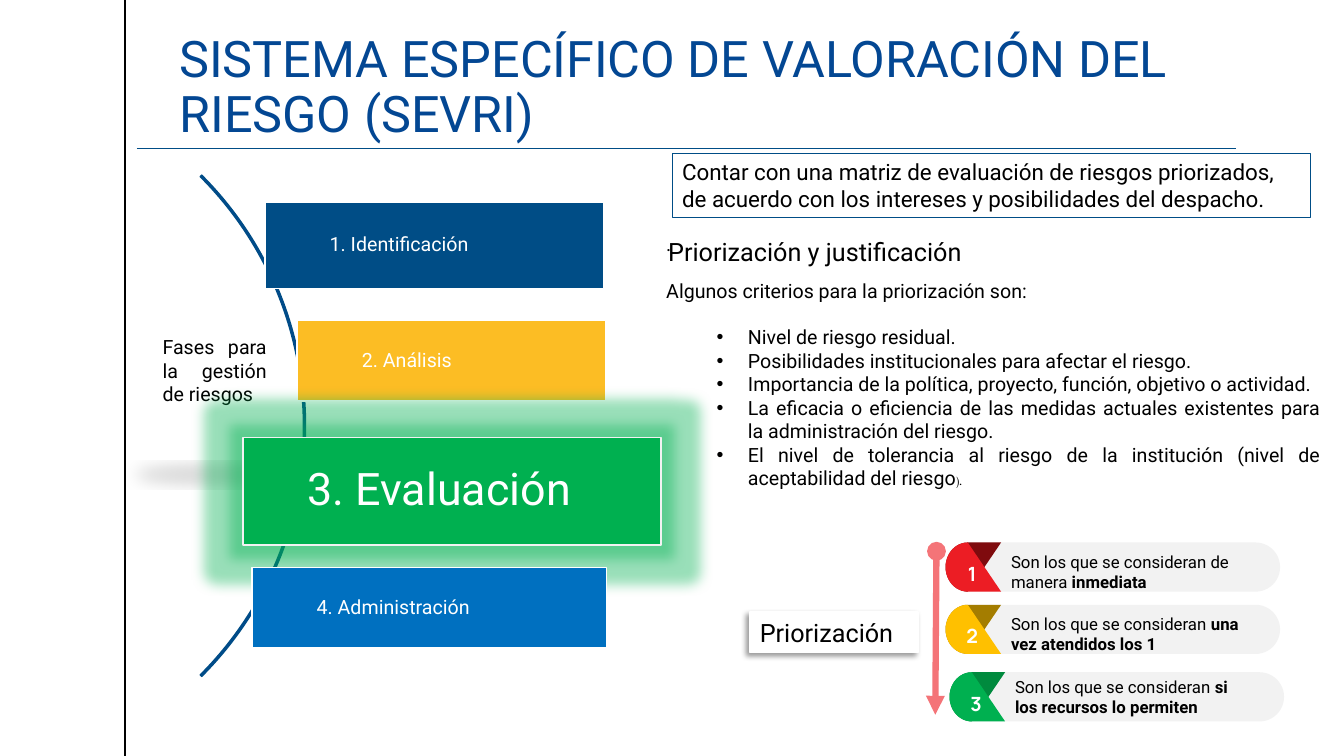
"""Build the slide on the SEVRI risk evaluation phase."""
from dataclasses import dataclass
from math import cos, pi, sin
from typing import Optional

from lxml.etree import SubElement
from pptx import Presentation
from pptx.dml.color import RGBColor
from pptx.enum.shapes import MSO_CONNECTOR, MSO_SHAPE
from pptx.enum.text import MSO_ANCHOR, MSO_AUTO_SIZE, PP_ALIGN
from pptx.oxml import parse_xml
from pptx.oxml.ns import nsdecls, qn
from pptx.util import Cm, Pt

COLORS = {
    "title": "034793", "navy": "004D86", "amber": "FCBD24", "green": "00B050",
    "blue": "0070C0", "white": "FFFFFF", "black": "000000", "pale": "F2F2F2",
    "arrow": "F47478", "red": "EC1D24", "dark_red": "7F0B0E", "yellow": "FFC000",
    "dark_yellow": "A47D00", "dark_green": "008A3E",
}
PILL_WIDTH, PILL_HEIGHT = 8.43, 1.24
BADGE_WIDTH, BADGE_ROUND = 1.4, 0.56
ARC_STEPS = 24


@dataclass(frozen=True)
class Phase:
    name: str
    left: float
    top: float
    width: float
    height: float
    fill: str
    border: str = "white"
    size: int = 14


@dataclass(frozen=True)
class Priority:
    number: str
    lead: str
    emphasis: str
    left: float
    top: float
    text_top: float
    fill: str
    fold: str


PHASES = (
    Phase("1. Identificación", 6.68, 5.11, 8.53, 2.16, "navy"),
    Phase("2. Análisis", 7.49, 8.08, 7.77, 2.03, "amber"),
    Phase("3. Evaluación", 6.12, 11.02, 10.54, 2.72, "green", "pale", 32),
    Phase("4. Administración", 6.35, 14.3, 8.94, 2.03, "blue"),
)
PRIORITIES = (
    Priority("1", "Son los que se consideran de manera ", "inmediata",
             23.83, 13.67, 13.77, "red", "dark_red"),
    Priority("2", "Son los que se consideran ", "una vez atendidos los 1",
             23.83, 15.24, 15.34, "yellow", "dark_yellow"),
    Priority("3", "Son los que se consideran ", "si los recursos lo permiten",
             23.93, 16.94, 16.92, "green", "dark_green"),
)
CRITERIA = (
    "Nivel de riesgo residual.",
    "Posibilidades institucionales para afectar el riesgo.",
    "Importancia de la política, proyecto, función, objetivo o actividad.",
    "La eficacia o eficiencia de las medidas actuales existentes para la administración del riesgo.",
    "El nivel de tolerancia al riesgo de la institución (nivel de aceptabilidad del riesgo",
)


def rgb(name: str) -> RGBColor:
    """Return the named colour."""
    return RGBColor.from_string(COLORS[name])


def write(paragraph, text: str, *, size: float, color: str = "black", font: str = "Roboto",
          bold: bool = False, align=PP_ALIGN.LEFT, line_spacing: Optional[float] = None,
          space_before: float = 0) -> None:
    """Append a formatted run to a paragraph."""
    paragraph.alignment = align
    paragraph.space_before = Pt(space_before)
    if line_spacing:
        paragraph.line_spacing = line_spacing
    run = paragraph.add_run()
    run.text = text
    run.font.name, run.font.size, run.font.bold = font, Pt(size), bold
    run.font.color.rgb = rgb(color)


def style(shape, fill: Optional[str], border: Optional[str] = None, weight: float = 1) -> None:
    """Set fill and border and remove the shadow."""
    shape.shadow.inherit = False
    if fill:
        shape.fill.solid()
        shape.fill.fore_color.rgb = rgb(fill)
    else:
        shape.fill.background()
    if border:
        shape.line.color.rgb = rgb(border)
        shape.line.width = Pt(weight)
    else:
        shape.line.fill.background()


def add_block(slide, kind, left: float, top: float, width: float, height: float,
              fill: Optional[str], border: Optional[str] = None, weight: float = 1):
    """Add a preset shape with wrapped, top-anchored text."""
    block = slide.shapes.add_shape(kind, Cm(left), Cm(top), Cm(width), Cm(height))
    style(block, fill, border, weight)
    block.text_frame.word_wrap = True
    block.text_frame.vertical_anchor = MSO_ANCHOR.TOP
    return block


def add_frame(slide, left: float, top: float, width: float, height: float):
    """Add a wrapping text box and return its text frame."""
    frame = slide.shapes.add_textbox(Cm(left), Cm(top), Cm(width), Cm(height)).text_frame
    frame.word_wrap = True
    return frame


def add_effect(shape, tag: str, color: str, alpha: int, **attributes: int) -> None:
    """Add a shadow or a glow to a shape."""
    settings = " ".join(f'{key}="{value}"' for key, value in attributes.items())
    effect = parse_xml(
        f'<a:{tag} {nsdecls("a")} {settings}><a:srgbClr val="{COLORS[color]}">'
        f'<a:alpha val="{alpha * 1000}"/></a:srgbClr></a:{tag}>')
    shape._element.spPr.find(qn("a:effectLst")).append(effect)


def add_line(slide, start: tuple, end: tuple, color: str, weight: float):
    """Add a straight line without shadow."""
    line = slide.shapes.add_connector(
        MSO_CONNECTOR.STRAIGHT, Cm(start[0]), Cm(start[1]), Cm(end[0]), Cm(end[1]))
    line.line.color.rgb = rgb(color)
    line.line.width = Pt(weight)
    SubElement(line._element.spPr, qn("a:effectLst"))
    return line


def add_badge_half(slide, left: float, top: float, fill: str, flipped: bool) -> None:
    """Add a round-ended badge piece whose tip points to one right corner."""
    middle = PILL_HEIGHT / 2
    angles = [pi * step / ARC_STEPS for step in range(ARC_STEPS + 1)]
    outline = [(BADGE_WIDTH, 0.0)]
    outline += [(BADGE_ROUND * (1 - sin(a)), middle * (1 - cos(a))) for a in angles]
    points = [(Cm(left + x), Cm(top + (PILL_HEIGHT - y if flipped else y))) for x, y in outline]
    builder = slide.shapes.build_freeform(*points[0])
    builder.add_line_segments(points[1:], close=True)
    style(builder.convert_to_shape(), fill)


def add_phase(slide, phase: Phase) -> None:
    """Add one phase bar."""
    bar = add_block(slide, MSO_SHAPE.RECTANGLE, phase.left, phase.top, phase.width,
                    phase.height, phase.fill, phase.border)
    frame = bar.text_frame
    frame.vertical_anchor = MSO_ANCHOR.MIDDLE
    frame.margin_left = Cm(1.63)
    write(frame.paragraphs[0], phase.name, size=phase.size, color="white", line_spacing=0.9)
    if phase.size > 14:
        add_effect(bar, "glow", phase.fill, 40, rad=Pt(18))


def add_priority(slide, item: Priority) -> None:
    """Add one priority pill with its numbered badge."""
    pill = add_block(slide, MSO_SHAPE.ROUNDED_RECTANGLE, item.left, item.top,
                     PILL_WIDTH, PILL_HEIGHT, "pale")
    pill.adjustments[0] = 0.5
    add_badge_half(slide, item.left, item.top, item.fold, False)
    add_badge_half(slide, item.left, item.top, item.fill, True)
    number = add_frame(slide, item.left + 0.44, item.top + 0.36, 0.46, 0.86)
    number.margin_left = number.margin_right = 0
    number.vertical_anchor = MSO_ANCHOR.MIDDLE
    write(number.paragraphs[0], item.number, size=14, color="white", font="Manrope",
          bold=True, align=PP_ALIGN.CENTER)
    meaning = add_frame(slide, item.left + BADGE_WIDTH, item.text_top, 6.27, 1.27).paragraphs[0]
    write(meaning, item.lead, size=12)
    write(meaning, item.emphasis, size=12, bold=True)


def add_criteria(slide) -> None:
    """Add the prioritisation criteria and their heading."""
    frame = add_frame(slide, 16.54, 5.72, 16.99, 7.44)
    write(frame.paragraphs[0], ".", size=14, align=PP_ALIGN.JUSTIFY)
    write(frame.add_paragraph(), "Algunos criterios para la priorización son:", size=14,
          align=PP_ALIGN.JUSTIFY, space_before=16.5)
    for index, criterion in enumerate(CRITERIA):
        entry = frame.add_paragraph()
        entry.level = 1
        properties = entry._p.get_or_add_pPr()
        properties.set("marL", str(Cm(2.06)))
        properties.set("indent", str(Cm(-0.79)))
        SubElement(properties, qn("a:buFont"), typeface="Arial")
        SubElement(properties, qn("a:buChar"), char="•")
        write(entry, criterion, size=14, align=PP_ALIGN.JUSTIFY,
              space_before=0 if index else 16.5)
    write(entry, ").", size=8, font="Vollkorn", align=PP_ALIGN.JUSTIFY)
    heading = add_frame(slide, 16.59, 5.82, 8.84, 1.02)
    write(heading.paragraphs[0], "Priorización y justificación", size=18)


def main() -> None:
    """Build and save the slide."""
    deck = Presentation()
    deck.slide_width, deck.slide_height = Cm(33.87), Cm(19.05)
    slide = deck.slides.add_slide(deck.slide_layouts[5])
    title = slide.shapes.title
    title.left, title.top, title.width, title.height = Cm(4.52), Cm(0.94), Cm(28.14), Cm(2.79)
    heading = title.text_frame
    heading.auto_size, heading.word_wrap = MSO_AUTO_SIZE.NONE, True
    heading.vertical_anchor = MSO_ANCHOR.BOTTOM
    heading.margin_left = heading.margin_right = 0
    write(heading.paragraphs[0], "SISTEMA ESPECÍFICO DE VALORACIÓN DEL RIESGO (SEVRI)",
          size=36, color="title", line_spacing=0.9)

    add_line(slide, (3.15, 0), (3.15, 19.05), "black", 1)
    cycle = add_block(slide, MSO_SHAPE.OVAL, 3.2, 7.9, 4.42, 2.9, "white")
    add_effect(cycle, "outerShdw", "black", 15, blurRad=Pt(12), dist=Pt(25), dir=5400000,
               sx=90000, sy=-19000, rotWithShape=0)
    write(cycle.text_frame.paragraphs[0], "Fases para la gestión de riesgos", size=14,
          align=PP_ALIGN.JUSTIFY)
    add_line(slide, (3.45, 3.73), (31.14, 3.73), "navy", 0.5)
    arc = add_block(slide, MSO_SHAPE.BLOCK_ARC, -10.16, 1.8, 17.86, 17.86, "title", "navy")
    for index, value in enumerate((189, 27, 0.003)):
        arc.adjustments[index] = value
    for phase in PHASES:
        add_phase(slide, phase)

    goal = add_block(slide, MSO_SHAPE.RECTANGLE, 16.94, 3.86, 16.08, 1.63, None, "navy", 0.75)
    write(goal.text_frame.paragraphs[0],
          "Contar con una matriz de evaluación de riesgos priorizados, de acuerdo con los "
          "intereses y posibilidades del despacho.", size=16)
    for item in PRIORITIES:
        add_priority(slide, item)
    label = add_block(slide, MSO_SHAPE.RECTANGLE, 18.9, 15.42, 4.24, 1.02, "white", "white")
    add_effect(label, "outerShdw", "black", 40, blurRad=Pt(4), dist=Pt(3), dir=8100000)
    write(label.text_frame.paragraphs[0], "Priorización", size=18)
    urgency = add_line(slide, (23.6, 13.89), (23.57, 18.01), "arrow", 4.5)
    outline = urgency.line._get_or_add_ln()
    SubElement(outline, qn("a:headEnd"), type="oval")
    SubElement(outline, qn("a:tailEnd"), type="triangle")
    add_criteria(slide)
    deck.save("out.pptx")


if __name__ == "__main__":
    main()
